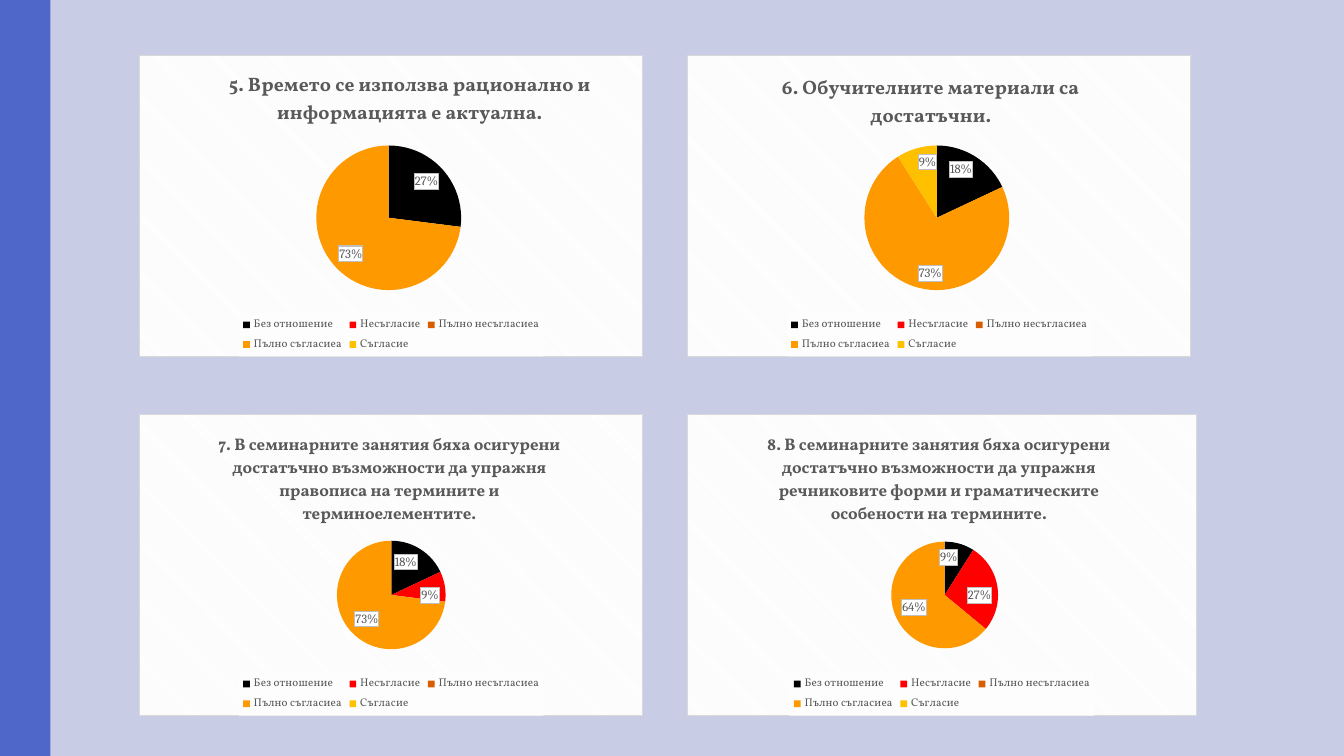
from lxml.etree import SubElement
from pptx import Presentation
from pptx.chart.data import CategoryChartData
from pptx.dml.color import RGBColor
from pptx.enum.chart import XL_CHART_TYPE as ChartType
from pptx.enum.chart import XL_LABEL_POSITION as LabelPosition
from pptx.enum.chart import XL_LEGEND_POSITION as LegendPosition
from pptx.enum.shapes import MSO_SHAPE as Shape
from pptx.oxml import parse_xml
from pptx.oxml.ns import nsdecls, qn
from pptx.util import Pt

BACKGROUND = RGBColor(0xC8, 0xCD, 0xE5)
SIDEBAR = RGBColor(0x4E, 0x67, 0xC8)
TEXT = RGBColor(0x59, 0x59, 0x59)
ANSWER_COLOURS = {
    "Без отношение": RGBColor(0x00, 0x00, 0x00),
    "Несъгласие": RGBColor(0xFF, 0x00, 0x00),
    "Пълно несъгласиеа": RGBColor(0xD8, 0x5C, 0x00),
    "Пълно съгласиеа": RGBColor(0xFF, 0x99, 0x00),
    "Съгласие": RGBColor(0xFF, 0xC0, 0x00),
}

CHART_HEIGHT = 216
LEFT_COLUMN, RIGHT_COLUMN = 99.5, 491
TOP_ROW, BOTTOM_ROW = 39, 295.5
# question, left, top, width, title size, title corner, pie top and height, percentages
QUESTIONS = [
    ("5. Времето се използва рационално и информацията е актуална.",
     LEFT_COLUMN, TOP_ROW, 360, 14, (0.17, 0.04), (0.3, 0.48), (27, 0, 0, 73, 0)),
    ("6. Обучителните материали са достатъчни.",
     RIGHT_COLUMN, TOP_ROW, 360, 14, (0.18, 0.05), (0.3, 0.48), (18, 0, 0, 73, 9)),
    ("7. В семинарните занятия бяха осигурени достатъчно възможности да упражня "
     "правописа на термините и терминоелементите.",
     LEFT_COLUMN, BOTTOM_ROW, 360, 12, (0.15, 0.05), (0.42, 0.36), (18, 9, 0, 73, 0)),
    ("8. В семинарните занятия бяха осигурени достатъчно възможности да упражня "
     "речниковите форми и граматическите особености на термините.",
     RIGHT_COLUMN, BOTTOM_ROW, 364, 12, (0.15, 0.05), (0.42, 0.36), (9, 27, 0, 64, 0)),
]


def box_properties(fill, line):
    """Return the c:spPr of a filled box with a thin border."""
    return parse_xml(
        f'<c:spPr {nsdecls("c", "a")}>{fill}<a:ln w="9525">{line}</a:ln></c:spPr>')


def solid(colour):
    return f'<a:solidFill><a:srgbClr val="{colour}"/></a:solidFill>'


def set_font(font, size, name, colour=TEXT, bold=False):
    font.size, font.name, font.bold = Pt(size), name, bold
    font.color.rgb = colour


def manual_layout(**settings):
    layout = parse_xml(f'<c:layout {nsdecls("c")}><c:manualLayout/></c:layout>')
    for tag, value in settings.items():
        SubElement(layout[0], qn(f"c:{tag}")).set("val", str(value))
    return layout


def replace_layout(parent, layout, position):
    for old in parent.findall(qn("c:layout")):
        parent.remove(old)
    parent.insert(position, layout)


def add_sidebar(slide):
    sidebar = slide.shapes.add_shape(Shape.RECTANGLE, 0, 0, Pt(36), Pt(540))
    sidebar.shadow.inherit = False
    sidebar.fill.solid()
    sidebar.fill.fore_color.rgb = SIDEBAR
    sidebar.line.fill.background()


def style_frame(chart):
    pattern = ('<a:pattFill prst="dkDnDiag"><a:fgClr><a:srgbClr val="F2F2F2"/></a:fgClr>'
               '<a:bgClr><a:srgbClr val="FFFFFF"/></a:bgClr></a:pattFill>')
    chart.element.find(qn("c:chart")).addnext(box_properties(pattern, solid("D9D9D9")))


def style_title(chart, question, size, corner):
    chart.has_title = True
    frame = chart.chart_title.text_frame
    frame.text = question
    set_font(frame.paragraphs[0].runs[0].font, size, "Vollkorn", bold=True)
    chart.chart_title.include_in_layout = False
    layout = manual_layout(xMode="edge", yMode="edge", x=corner[0], y=corner[1])
    replace_layout(chart.element.find(".//" + qn("c:title")), layout, 1)


def style_legend(chart):
    chart.has_legend = True
    chart.legend.position = LegendPosition.BOTTOM
    chart.legend.include_in_layout = False
    set_font(chart.legend.font, 8, "Vollkorn")
    legend = chart.element.find(".//" + qn("c:legend"))
    legend.find(qn("c:txPr")).addprevious(box_properties(solid("FDFDFD"), "<a:noFill/>"))


def style_slices(chart, percentages):
    plot = chart.plots[0]
    plot.vary_by_categories = True
    plot.has_data_labels = True
    labels = plot.data_labels
    labels.show_percentage, labels.show_value = True, False
    labels.number_format, labels.number_format_is_linked = "0%", False
    labels.position = LabelPosition.INSIDE_END
    set_font(labels.font, 9, "Cambria")
    labels_xml = chart.element.find(".//" + qn("c:dLbls"))
    labels_xml.find(qn("c:txPr")).addprevious(
        box_properties(solid("FFFFFF"), solid("BFBFBF")))

    series = plot.series[0]
    for index, colour in enumerate(ANSWER_COLOURS.values()):
        slice_fill = series.points[index].format.fill
        slice_fill.solid()
        slice_fill.fore_color.rgb = colour
    hidden = [index for index, value in enumerate(percentages) if value == 0]
    for position, index in enumerate(hidden):
        labels_xml.insert(position, parse_xml(
            f'<c:dLbl {nsdecls("c")}><c:idx val="{index}"/><c:delete val="1"/></c:dLbl>'))
    chart.element.find(".//" + qn("c:cat")).addprevious(labels_xml)


def add_question_chart(slide, question, left, top, width, size, corner, pie, percentages):
    answers = CategoryChartData()
    answers.categories = list(ANSWER_COLOURS)
    answers.add_series("Series 1", percentages)
    chart = slide.shapes.add_chart(
        ChartType.PIE, Pt(left), Pt(top), Pt(width), Pt(CHART_HEIGHT), answers).chart
    set_font(chart.font, 10, "Cambria")
    style_frame(chart)
    style_title(chart, question, size, corner)
    style_legend(chart)
    style_slices(chart, percentages)

    pie_top, pie_height = pie
    pie_width = round(pie_height * CHART_HEIGHT / width, 2)
    layout = manual_layout(
        layoutTarget="inner", xMode="edge", yMode="edge",
        x=round((1 - pie_width) / 2, 2), y=pie_top, w=pie_width, h=pie_height)
    replace_layout(chart.element.find(".//" + qn("c:plotArea")), layout, 0)


def main():
    presentation = Presentation()
    presentation.slide_width, presentation.slide_height = Pt(960), Pt(540)
    slide = presentation.slides.add_slide(presentation.slide_layouts[6])
    slide.background.fill.solid()
    slide.background.fill.fore_color.rgb = BACKGROUND
    add_sidebar(slide)
    for question in QUESTIONS:
        add_question_chart(slide, *question)
    presentation.save("out.pptx")


if __name__ == "__main__":
    main()
